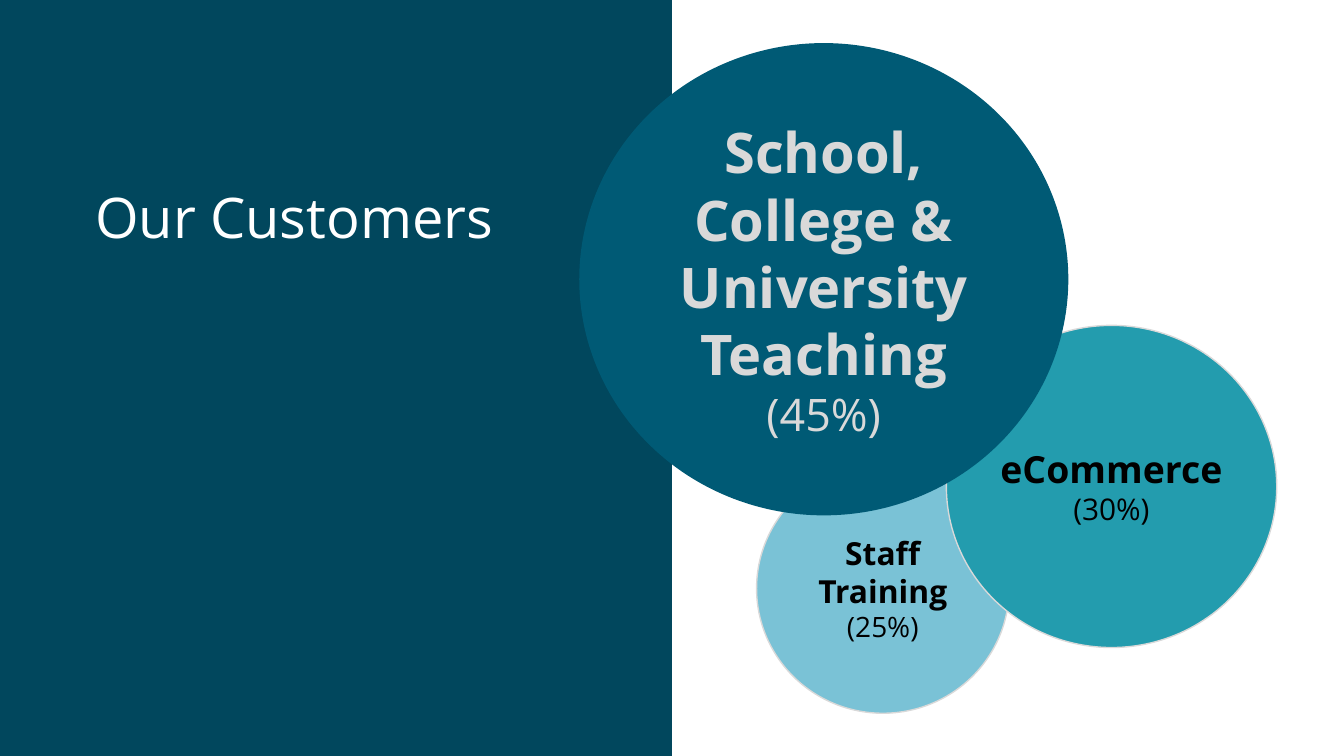
import pptx
import pptx.util
import pptx.dml.color
import pptx.enum.shapes
import pptx.enum.text

Pt = pptx.util.Pt
SHAPES = pptx.enum.shapes.MSO_SHAPE
ANCHOR = pptx.enum.text.MSO_ANCHOR
ALIGN = pptx.enum.text.PP_ALIGN

FONT = "Open Sans"
WIDTH, HEIGHT = 720, 405
COLORS = {
    "panel": "01475D",
    "title": "FFFFFF",
    "teaching": "005A75",
    "commerce": "239CAE",
    "training": "7AC2D6",
    "pale": "D9D9D9",
    "dark": "000000",
}

TITLE = "Our Customers"
# Back to front; box is left, top, width, height
CUSTOMERS = [
    {"names": ["Staff", "Training"], "share": "(25%)", "sizes": (17, 15),
     "box": (405.3, 248.4, 135.3, 133.7), "inset": 7.2,
     "fill": "training", "text": "dark", "outline": "pale"},
    {"names": ["eCommerce"], "share": "(30%)", "sizes": (20, 16),
     "box": (507, 174.3, 177, 172.6), "inset": 0,
     "fill": "commerce", "text": "dark", "outline": "pale"},
    {"names": ["School, College & University Teaching"], "share": "(45%)",
     "sizes": (30, 24), "box": (310.3, 23.1, 262, 253), "inset": 7.2,
     "fill": "teaching", "text": "pale", "outline": None},
]


def rgb(color):
    return pptx.dml.color.RGBColor.from_string(COLORS[color])


def add_filled(slide, kind, box, fill, outline=None):
    shape = slide.shapes.add_shape(kind, *map(Pt, box))
    shape.shadow.inherit = False
    shape.fill.solid()
    shape.fill.fore_color.rgb = rgb(fill)
    if outline:
        shape.line.color.rgb = rgb(outline)
        shape.line.width = Pt(0.75)
    else:
        shape.line.fill.background()
    return shape


def set_frame(frame, inset, anchor):
    frame.word_wrap = True
    frame.vertical_anchor = anchor
    frame.margin_left = frame.margin_right = Pt(inset)
    frame.margin_top = frame.margin_bottom = Pt(inset)


def add_run(paragraph, text, size, color, bold=False):
    run = paragraph.add_run()
    run.text = text
    run.font.name = FONT
    run.font.size = Pt(size)
    run.font.bold = bold
    run.font.color.rgb = rgb(color)


def add_customer(slide, customer):
    circle = add_filled(slide, SHAPES.OVAL, customer["box"],
                        customer["fill"], customer["outline"])
    frame = circle.text_frame
    set_frame(frame, customer["inset"], ANCHOR.MIDDLE)
    name_size, share_size = customer["sizes"]
    lines = [(name, name_size, True) for name in customer["names"]]
    lines.append((customer["share"], share_size, False))
    for index, (text, size, bold) in enumerate(lines):
        paragraph = frame.add_paragraph() if index else frame.paragraphs[0]
        paragraph.alignment = ALIGN.CENTER
        add_run(paragraph, text, size, customer["text"], bold)


def main():
    deck = pptx.Presentation()
    deck.slide_width, deck.slide_height = Pt(WIDTH), Pt(HEIGHT)
    slide = deck.slides.add_slide(deck.slide_layouts[6])

    add_filled(slide, SHAPES.RECTANGLE, (0, 0, WIDTH / 2, HEIGHT), "panel")

    title = slide.shapes.add_textbox(Pt(51), Pt(98), Pt(309), Pt(59))
    set_frame(title.text_frame, 0, ANCHOR.TOP)
    add_run(title.text_frame.paragraphs[0], TITLE, 30, "title")

    for customer in CUSTOMERS:
        add_customer(slide, customer)
    deck.save("out.pptx")


if __name__ == "__main__":
    main()
